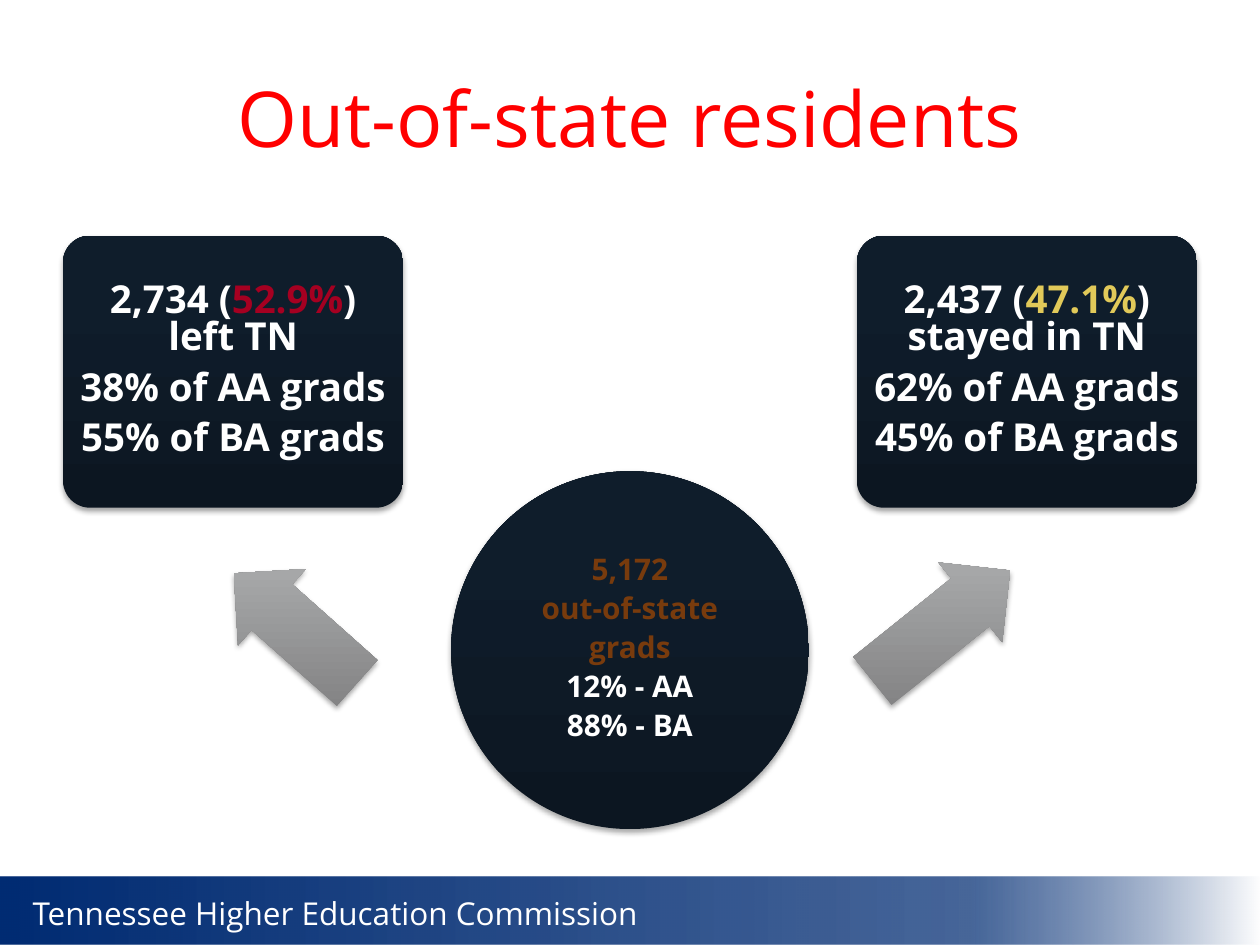
from pptx import Presentation
from pptx.dml.color import RGBColor
from pptx.enum.shapes import MSO_SHAPE
from pptx.enum.text import MSO_ANCHOR, PP_ALIGN
from pptx.oxml import parse_xml
from pptx.oxml.ns import nsdecls, qn
from pptx.util import Inches, Pt

# Content: each paragraph is a list of (text, colour name) runs
TITLE = "Out-of-state residents"
FOOTER = "Tennessee Higher Education Commission"
OUTCOMES = [
    [[("2,734 (", "white"), ("52.9%", "crimson"), (") left TN", "white")],
     [("38% of AA grads", "white")],
     [("55% of BA grads", "white")]],
    [[("2,437 (", "white"), ("47.1%", "gold"), (") stayed in TN", "white")],
     [("62% of AA grads", "white")],
     [("45% of BA grads", "white")]],
]
GRADUATES = [
    [("5,172", "brown")],
    [("out-of-state", "brown")],
    [("grads", "brown")],
    [("12% - AA", "white")],
    [("88% - BA", "white")],
]
# Left, top, width, height, rotation
ARROWS = [(1.69, 4.58, 1.31, 0.81, 41.6), (6.77, 4.56, 1.40, 0.81, 141.3)]

THEME = {
    "font": "Open Sans",
    "title_size": 44, "footer_size": 18, "outcome_size": 22, "graduates_size": 17,
    "white": "FFFFFF", "red": "FF0000", "crimson": "A50021",
    "gold": "E1C959", "brown": "783B0D",
    # Gradient stops: position %, colour, opacity %
    "navy": [(0, "0C1621", 100), (80, "0F1D2B", 100), (100, "0F1D2C", 100)],
    "grey": [(0, "808081", 100), (80, "A6A7A8", 100), (100, "A7A7A9", 100)],
    "band": [(0, "002C73", 100), (77, "002C73", 72), (100, "FFFFFF", 100)],
}
SLIDE_W, SLIDE_H = 10, 7.5
MARGIN = 0.5
CARD_W, CARD_H, CARD_TOP = 2.7, 2.16, 1.87
CIRCLE, CIRCLE_TOP = 2.84, 3.74
BAND_H = 0.54


def add_filled(slide, kind, box, gradient, angle, shadow=True):
    shape = slide.shapes.add_shape(kind, *map(Inches, box))
    shape.line.fill.background()
    shape.shadow.inherit = False
    stops = "".join(
        f'<a:gs pos="{pos * 1000}"><a:srgbClr val="{colour}">'
        f'<a:alpha val="{opacity * 1000}"/></a:srgbClr></a:gs>'
        for pos, colour, opacity in THEME[gradient])
    properties = shape.element.spPr
    properties.find(qn("a:ln")).addprevious(parse_xml(
        f'<a:gradFill {nsdecls("a")} rotWithShape="0"><a:gsLst>{stops}</a:gsLst>'
        f'<a:lin ang="{angle * 60000}" scaled="0"/></a:gradFill>'))
    if shadow:
        properties.find(qn("a:effectLst")).append(parse_xml(
            f'<a:outerShdw {nsdecls("a")} blurRad="{Pt(3.1)}" dist="{Pt(1.8)}" '
            'dir="5400000" rotWithShape="0"><a:srgbClr val="000000">'
            '<a:alpha val="35000"/></a:srgbClr></a:outerShdw>'))
    return shape


def style(font, size, colour, bold=False):
    font.name = THEME["font"]
    font.size = Pt(size)
    font.bold = bold
    font.color.rgb = RGBColor.from_string(THEME[colour])


def write_facts(shape, facts, size, inset):
    frame = shape.text_frame
    frame.word_wrap = True
    frame.vertical_anchor = MSO_ANCHOR.MIDDLE
    frame.margin_left = frame.margin_right = Inches(inset)
    frame.margin_top = frame.margin_bottom = Inches(inset)
    for i, fact in enumerate(facts):
        paragraph = frame.add_paragraph() if i else frame.paragraphs[0]
        paragraph.alignment = PP_ALIGN.CENTER
        paragraph.line_spacing = 0.8
        paragraph.space_after = Pt(round(size * 0.35, 1))
        for text, colour in fact:
            run = paragraph.add_run()
            run.text = text
            style(run.font, size, colour, bold=True)


def add_label(slide, box, text, size, colour):
    frame = slide.shapes.add_textbox(*map(Inches, box)).text_frame
    frame.text = text
    style(frame.paragraphs[0].runs[0].font, size, colour)
    return frame


def main():
    deck = Presentation()
    deck.slide_width, deck.slide_height = Inches(SLIDE_W), Inches(SLIDE_H)
    slide = deck.slides.add_slide(deck.slide_layouts[6])

    # Footer band
    add_filled(slide, MSO_SHAPE.RECTANGLE,
               (0, SLIDE_H - BAND_H, SLIDE_W, BAND_H), "band", 0, shadow=False)
    footer = add_label(slide, (0.16, 7.05, 5.05, 0.4), FOOTER,
                       THEME["footer_size"], "white")
    footer.word_wrap = False

    # Title
    title = add_label(slide, (MARGIN, 0.3, SLIDE_W - 2 * MARGIN, 1.25), TITLE,
                      THEME["title_size"], "red")
    title.word_wrap = True
    title.vertical_anchor = MSO_ANCHOR.MIDDLE
    title.paragraphs[0].alignment = PP_ALIGN.CENTER

    # Central circle of graduates
    circle = add_filled(slide, MSO_SHAPE.OVAL,
                        ((SLIDE_W - CIRCLE) / 2, CIRCLE_TOP, CIRCLE, CIRCLE), "navy", 270)
    write_facts(circle, GRADUATES, THEME["graduates_size"], 0.01)

    # Arrows and outcome cards, mirrored left and right
    card_lefts = (MARGIN, SLIDE_W - MARGIN - CARD_W)
    for (*box, rotation), left, facts in zip(ARROWS, card_lefts, OUTCOMES):
        arrow = add_filled(slide, MSO_SHAPE.LEFT_ARROW, box, "grey", 270)
        arrow.adjustments[0], arrow.adjustments[1] = 0.6, 0.5
        arrow.rotation = rotation
        card = add_filled(slide, MSO_SHAPE.ROUNDED_RECTANGLE,
                          (left, CARD_TOP, CARD_W, CARD_H), "navy", 270)
        card.adjustments[0] = 0.1
        write_facts(card, facts, THEME["outcome_size"], 0.05)

    deck.save("out.pptx")


if __name__ == "__main__":
    main()
